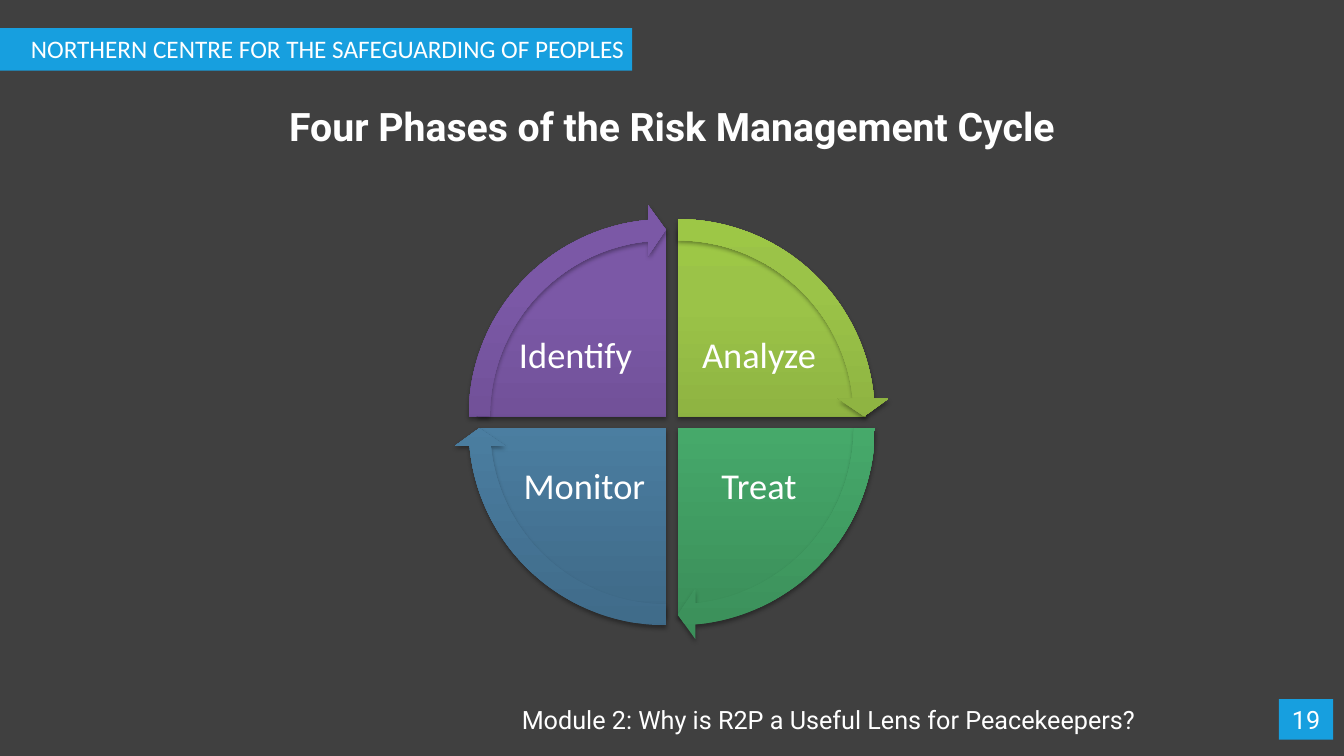
from lxml import etree
from pptx import Presentation
from pptx.dml.color import RGBColor
from pptx.enum.shapes import MSO_SHAPE as Shape
from pptx.enum.text import MSO_ANCHOR as Anchor, PP_ALIGN as Align
from pptx.oxml import parse_xml
from pptx.oxml.ns import nsdecls, qn
from pptx.util import Cm, Pt

WHITE = "FFFFFF"
ACCENT = "179FDF"
BACKGROUND = "404040"
QUARTER_TURN = 54

PHASES = [
    ("Analyze", 1, -1, 162, ("779737", "9BC348", "9DC746")),
    ("Treat", 1, 1, 0, ("3B8F5A", "4DBA75", "4BBD75")),
    ("Monitor", -1, 1, 54, ("3F6A88", "528AB0", "518BB3")),
    ("Identify\t", -1, -1, 108, ("5F4480", "7B58A6", "7C57A8")),
]


def color(hex_code):
    return RGBColor.from_string(hex_code)


def write(frame, text, size, font, align=Align.LEFT, anchor=Anchor.TOP, bold=False):
    frame.word_wrap = True
    frame.vertical_anchor = anchor
    paragraph = frame.paragraphs[0]
    paragraph.alignment = align
    run = paragraph.add_run()
    run.text = text
    run.font.size = Pt(size)
    run.font.name = font
    run.font.bold = bold
    run.font.color.rgb = color(WHITE)
    return paragraph


def add_text(shapes, box, text, size, font, **style):
    frame = shapes.add_textbox(*map(Cm, box)).text_frame
    return frame, write(frame, text, size, font, **style)


def add_band(shapes, box, text, font, align):
    band = shapes.add_shape(Shape.RECTANGLE, *map(Cm, box))
    band.shadow.inherit = False
    band.fill.solid()
    band.fill.fore_color.rgb = color(ACCENT)
    band.line.fill.background()
    write(band.text_frame, text, 18, font, align=align)
    return band


def shade(part, tones):
    part.line.fill.background()
    part.fill.gradient()
    part.fill.gradient_angle = 90
    stops = part._element.spPr.find(qn("a:gradFill")).find(qn("a:gsLst"))
    for stop in list(stops):
        stops.remove(stop)
    for position, tone in zip((0, 80, 100), tones):
        stop = etree.SubElement(stops, qn("a:gs"), pos=str(position * 1000))
        etree.SubElement(stop, qn("a:srgbClr"), val=tone)
    part.shadow.inherit = False
    part._element.spPr.find(qn("a:effectLst")).append(parse_xml(
        f'<a:outerShdw {nsdecls("a")} blurRad="40000" dist="23000" dir="5400000" rotWithShape="0">'
        '<a:srgbClr val="000000"><a:alpha val="35000"/></a:srgbClr></a:outerShdw>'))


def add_round_part(shapes, kind, center, diameter, adjustments, tones):
    corner = [Cm(middle - diameter / 2) for middle in center]
    part = shapes.add_shape(kind, *corner, Cm(diameter), Cm(diameter))
    for index, value in enumerate(adjustments):
        part.adjustments[index] = value
    shade(part, tones)


def add_phase_label(shapes, center, name):
    width, height = 3.5, 2.59
    box = (center[0] - width / 2, center[1] - height / 2, width, height)
    frame, paragraph = add_text(shapes, box, name, 26, "Calibri",
                                align=Align.CENTER, anchor=Anchor.MIDDLE)
    frame.margin_left = frame.margin_right = Cm(0.1)
    frame.margin_top = frame.margin_bottom = Cm(0.1)
    paragraph.line_spacing = 0.9


def add_cycle(slide, box):
    left, top, width, height = box
    middle_x, middle_y = left + width / 2, top + height / 2
    gap = 0.15
    arrow_size = width - 2 * gap
    pie_size = arrow_size - 1.2
    shapes = slide.shapes.add_group_shape().shapes

    def offset(side_x, side_y, across, down):
        return middle_x + side_x * across, middle_y + side_y * down

    for name, side_x, side_y, start, tones in PHASES:
        add_round_part(shapes, Shape.PIE, offset(side_x, side_y, gap, gap),
                       pie_size, (start, (start + QUARTER_TURN) % 216), tones)
        add_phase_label(shapes, offset(side_x, side_y, 2.2, 1.64), name)
    for name, side_x, side_y, start, tones in PHASES:
        bend = (0.05, 3.28, start + QUARTER_TURN - 3.28, start, 0.06)
        add_round_part(shapes, Shape.CIRCULAR_ARROW, offset(side_x, side_y, gap, gap),
                       arrow_size, bend, tones)


def add_header(slide, box):
    band = add_band(slide.shapes, box, "NORTHERN CENTRE FOR THE SAFEGUARDING OF PEOPLES",
                    "Calibri", Align.LEFT)
    band.text_frame.margin_left = Cm(0.83)
    band.text_frame.margin_right = Cm(0)


def add_title(slide, box):
    add_text(slide.shapes, box, "Four Phases of the Risk Management Cycle", 28, "Roboto",
             align=Align.CENTER, anchor=Anchor.MIDDLE, bold=True)


def add_footer(slide, box):
    left, top, width, height = box
    number_width = 1.37
    add_band(slide.shapes, (left + width - number_width, top, number_width, height),
             "19", "Roboto", Align.CENTER)
    add_text(slide.shapes, (left, top, width, height),
             "Module 2: Why is R2P a Useful Lens for Peacekeepers?", 18, "Roboto")


def main():
    deck = Presentation()
    deck.slide_width, deck.slide_height = Cm(33.87), Cm(19.05)
    slide = deck.slides.add_slide(deck.slide_layouts[6])
    slide.background.fill.solid()
    slide.background.fill.fore_color.rgb = color(BACKGROUND)
    add_title(slide, (3.38, 1.57, 27.1, 3.2))
    add_cycle(slide, (11.44, 5.15, 10.98, 10.98))
    add_header(slide, (-0.05, 0.71, 15.98, 1.07))
    add_footer(slide, (12.9, 17.62, 20.7, 1.02))
    deck.save("out.pptx")


if __name__ == "__main__":
    main()
